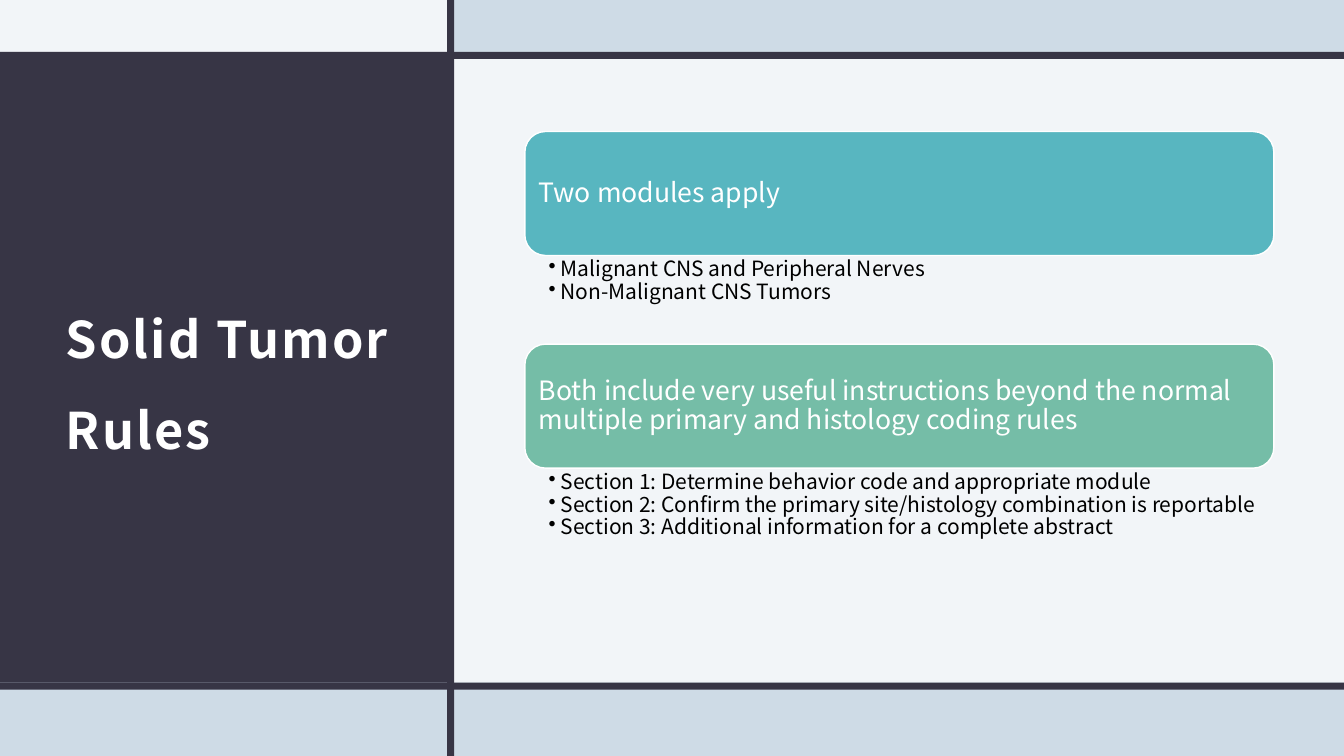
"""Builds the Solid Tumor Rules slide: a dark title panel beside two rule cards."""
from lxml.etree import SubElement
from pptx import Presentation
from pptx.dml.color import RGBColor
from pptx.enum.shapes import MSO_SHAPE as Shape
from pptx.enum.text import MSO_ANCHOR as Anchor, PP_ALIGN as Align
from pptx.oxml.ns import qn
from pptx.util import Inches, Pt

COLORS = {
    "sky": "CEDBE6", "ink": "373545", "white": "FFFFFF",
    "teal": "58B6C0", "green": "75BDA7", "black": "000000",
}
FONT = "Noto Sans CJK JP"

deck = Presentation()
deck.slide_width, deck.slide_height = Inches(13.33), Inches(7.5)
column, row = deck.slide_width / 100, deck.slide_height / 100
slide = deck.slides.add_slide(deck.slide_layouts[6])
slide.background.fill.solid()
slide.background.fill.fore_color.rgb = RGBColor.from_string(COLORS["sky"])


def add_block(kind, left, top, width, height, color):
    block = slide.shapes.add_shape(
        kind, int(left * column), int(top * row), int(width * column), int(height * row))
    block.shadow.inherit = False
    block.fill.solid()
    block.fill.fore_color.rgb = RGBColor.from_string(COLORS[color])
    block.line.fill.background()
    return block


def write_text(holder, lines, size, color, spacing, insets, anchor):
    frame = holder.text_frame
    frame.word_wrap = True
    frame.vertical_anchor = anchor
    frame.margin_left, frame.margin_right = (int(inset * column) for inset in insets[:2])
    frame.margin_top = frame.margin_bottom = int(insets[2] * row)
    frame.text = "\n".join(lines)
    for paragraph in frame.paragraphs:
        paragraph.alignment = Align.LEFT
        paragraph.line_spacing = spacing
        font = paragraph.runs[0].font
        font.name, font.size = FONT, Pt(size)
        font.color.rgb = RGBColor.from_string(COLORS[color])
    return frame.paragraphs


panel_width, bar_width, bar_height = 33.27, 0.53, 0.93
top_bar, bottom_bar = 6.87, 90.3
content_left = panel_width + bar_width
content_top = top_bar + bar_height

add_block(Shape.RECTANGLE, 0, top_bar, panel_width, bottom_bar - top_bar, "ink")
pale_areas = [
    (0, 0, panel_width, top_bar),
    (content_left, content_top, 100 - content_left, bottom_bar - content_top),
]
for area in pale_areas:
    pale = add_block(Shape.RECTANGLE, *area, "white")
    tint = pale.fill._xPr.find(qn("a:solidFill"))[0]
    SubElement(tint, qn("a:alpha")).set("val", "75000")

bars = [
    (0, bottom_bar, 100, bar_height),
    (panel_width, 0, bar_width, 100),
    (0, top_bar, 100, bar_height),
]
for bar in bars:
    add_block(Shape.RECTANGLE, *bar, "ink")

title = slide.shapes.add_textbox(
    int(4 * column), int(17.33 * row), int(27.7 * column), int(62.8 * row))
heading = write_text(
    title, ["Solid Tumor Rules"], 36, "white", 1.5, (0.9, 0.9, 1.5), Anchor.MIDDLE)[0]
heading.runs[0].font.bold = True
heading.runs[0].font._element.set("spc", "150")

rules = [
    ("teal", "Two modules apply",
     ["Malignant CNS and Peripheral Nerves", "Non-Malignant CNS Tumors"], 11.73),
    ("green",
     "Both include very useful instructions beyond the normal multiple primary and "
     "histology coding rules",
     ["Section 1: Determine behavior code and appropriate module",
      "Section 2: Confirm the primary site/histology combination is reportable",
      "Section 3: Additional information for a complete abstract"], 22.93),
]
card_left, card_width, card_height = 39.05, 55.73, 16.4
card_top = 17.4
for color, statement, details, details_height in rules:
    card = add_block(Shape.ROUNDED_RECTANGLE, card_left, card_top, card_width, card_height, color)
    card.line.color.rgb = RGBColor.from_string(COLORS["white"])
    card.line.width = Pt(1)
    write_text(card, [statement], 19, "white", 0.9, (0.6, 0.6, 1), Anchor.MIDDLE)

    details_top = card_top + card_height
    details_box = slide.shapes.add_textbox(
        int(card_left * column), int(details_top * row),
        int(card_width * column), int(details_height * row))
    for detail in write_text(
            details_box, details, 15, "black", 0.9, (1.77, 1.1, 0.4), Anchor.TOP):
        properties = detail._p.get_or_add_pPr()
        properties.set("marL", str(Inches(0.12)))
        properties.set("indent", str(-Inches(0.12)))
        SubElement(properties, qn("a:buChar")).set("char", "•")
    card_top = details_top + details_height

deck.save("out.pptx")
